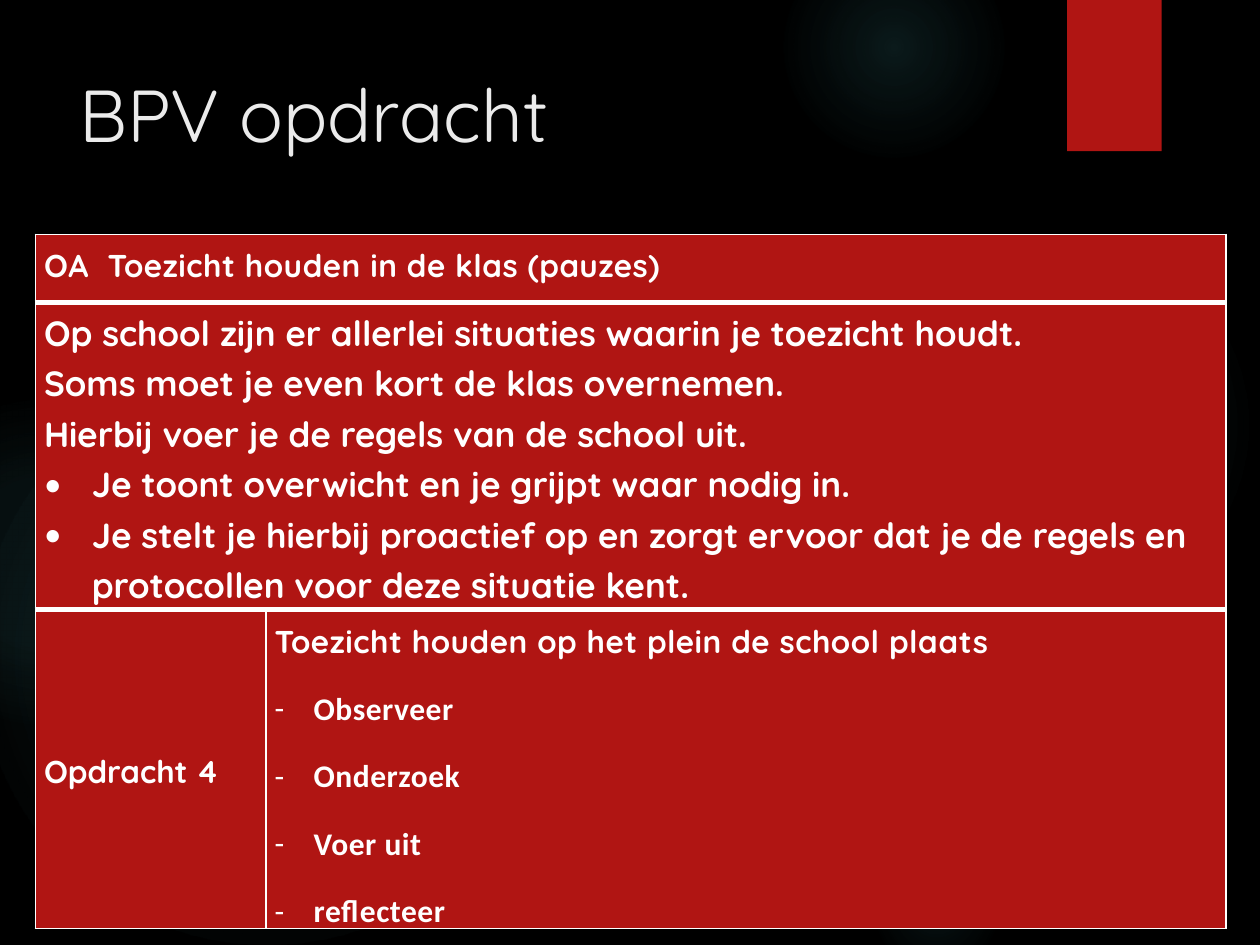
import lxml.etree
import pptx
import pptx.dml.color
import pptx.enum.shapes
import pptx.enum.text
import pptx.oxml.ns
import pptx.util

SLIDE_W, SLIDE_H = 10, 7.5
COLOURS = {"background": "000000", "red": "B01513", "glow": "50B9C1",
           "title": "EBEBEB", "white": "FFFFFF"}
HEADING = "Quicksand"
BODY = "Calibri"
MIDDLE = pptx.enum.text.MSO_ANCHOR.MIDDLE
TOP = pptx.enum.text.MSO_ANCHOR.TOP

# left, top, diameter, then (position %, opacity %) of each stop
GLOWS = [
    (6.89, 1.83, 3.08, [(0, 7), (36, 6), (69, 0)]),
    (6.22, -0.5, 1.75, [(0, 14), (36, 7), (73, 0)]),
    (6.89, 6.67, 1.08, [(0, 9), (36, 5), (66, 0)]),
    (-0.17, 2.92, 4.58, [(0, 11), (36, 10), (75, 0)]),
    (-0.92, 3.17, 2.58, [(0, 8), (36, 8), (72, 0)]),
]

INTRO = {"size": 20, "font": HEADING, "line_spacing": 1.15}
INTRO_BULLET = {**INTRO, "bullet": "•", "indent": 0.38}
LABEL = {"size": 18, "font": HEADING, "line_spacing": 1.15}
SUBJECT = {"size": 18, "font": HEADING, "line_spacing": 1.3, "tracking": 30}
TASK = {**SUBJECT, "space_after": 10}
STEP = {**TASK, "font": BODY, "bullet": "-", "indent": 0.31}

SUBJECT_TEXT = [("OA  Toezicht houden in de klas (pauzes)", SUBJECT)]
INTRO_TEXT = [
    ("Op school zijn er allerlei situaties waarin je toezicht houdt.", INTRO),
    ("Soms moet je even kort de klas overnemen.", INTRO),
    ("Hierbij voer je de regels van de school uit.", INTRO),
    ("Je toont overwicht en je grijpt waar nodig in.", INTRO_BULLET),
    ("Je stelt je hierbij proactief op en zorgt ervoor dat je de regels en "
     "protocollen voor deze situatie kent.", INTRO_BULLET),
]
LABEL_TEXT = [("Opdracht 4", LABEL)]
TASK_TEXT = [("Toezicht houden op het plein de school plaats", TASK)] + [
    (step, STEP) for step in ("Observeer", "Onderzoek", "Voer uit", "reflecteer")]


def rgb(name):
    return pptx.dml.color.RGBColor.from_string(COLOURS[name])


def inches(box):
    return [pptx.util.Inches(length) for length in box]


def add_node(parent, tag, **attributes):
    node = lxml.etree.SubElement(parent, pptx.oxml.ns.qn(tag))
    for key, value in attributes.items():
        node.set(key, str(value))
    return node


def add_plain_shape(slide, kind, box):
    shape = slide.shapes.add_shape(kind, *inches(box))
    shape.shadow.inherit = False
    shape.line.fill.background()
    return shape


def add_glow(slide, box, stops):
    """Ellipse that fades out from its centre."""
    glow = add_plain_shape(slide, pptx.enum.shapes.MSO_SHAPE.OVAL, box)
    glow.fill.gradient()
    gradient = glow.element.spPr.find(pptx.oxml.ns.qn("a:gradFill"))
    for child in list(gradient):
        gradient.remove(child)
    stop_list = add_node(gradient, "a:gsLst")
    for position, opacity in stops:
        stop = add_node(stop_list, "a:gs", pos=position * 1000)
        colour = add_node(stop, "a:srgbClr", val=COLOURS["glow"])
        add_node(colour, "a:alpha", val=opacity * 1000)
    circle = add_node(gradient, "a:path", path="circle")
    add_node(circle, "a:fillToRect", l=50000, t=50000, r=50000, b=50000)


def add_backdrop(slide):
    slide.background.fill.solid()
    slide.background.fill.fore_color.rgb = rgb("background")
    for left, top, diameter, stops in GLOWS:
        add_glow(slide, (left, top, diameter, diameter), stops)


def add_ribbon(slide, box):
    ribbon = add_plain_shape(slide, pptx.enum.shapes.MSO_SHAPE.RECTANGLE, box)
    ribbon.fill.solid()
    ribbon.fill.fore_color.rgb = rgb("red")


def add_title(slide, box):
    frame = slide.shapes.add_textbox(*inches(box)).text_frame
    frame.word_wrap = True
    frame.vertical_anchor = TOP
    run = frame.paragraphs[0].add_run()
    run.text = "BPV opdracht"
    run.font.color.rgb = rgb("title")
    for key, value in {"name": HEADING, "size": pptx.util.Pt(42)}.items():
        setattr(run.font, key, value)


def write_paragraph(paragraph, text, style):
    paragraph.line_spacing = style["line_spacing"]
    paragraph.space_after = pptx.util.Pt(style.get("space_after", 0))
    if "bullet" in style:
        properties = paragraph._p.get_or_add_pPr()
        indent = pptx.util.Inches(style["indent"])
        properties.set("marL", str(indent))
        properties.set("indent", str(-indent))
        add_node(properties, "a:buFont", typeface=BODY)
        add_node(properties, "a:buChar", char=style["bullet"])
    run = paragraph.add_run()
    run.text = text
    run.font.color.rgb = rgb("white")
    font = {"name": style["font"], "size": pptx.util.Pt(style["size"]), "bold": True}
    for key, value in font.items():
        setattr(run.font, key, value)
    run._r.get_or_add_rPr().set("spc", str(style.get("tracking", 0)))


def dress_cell(cell, top_width, bottom_width):
    """Set margins, white borders (in points) and the red fill."""
    margins = {"margin_left": 0.07, "margin_right": 0.07,
               "margin_top": 0, "margin_bottom": 0}
    for key, value in margins.items():
        setattr(cell, key, pptx.util.Inches(value))
    properties = cell._tc.get_or_add_tcPr()
    widths = {"a:lnL": 1, "a:lnR": 1, "a:lnT": top_width, "a:lnB": bottom_width}
    for tag, width in widths.items():
        border = add_node(properties, tag, w=pptx.util.Pt(width))
        add_node(add_node(border, "a:solidFill"), "a:srgbClr", val=COLOURS["white"])
    cell.fill.solid()
    cell.fill.fore_color.rgb = rgb("red")


def write_cell(cell, paragraphs, anchor):
    cell.vertical_anchor = anchor
    frame = cell.text_frame
    for index, (text, style) in enumerate(paragraphs):
        paragraph = frame.add_paragraph() if index else frame.paragraphs[0]
        write_paragraph(paragraph, text, style)


def add_assignment_table(slide, box):
    left, top, width, height = box
    label_width = 1.83
    subject_height, intro_height = 0.54, 2.44
    row_heights = [subject_height, intro_height,
                   height - subject_height - intro_height]
    edges = [1, 3, 3, 1]
    table = slide.shapes.add_table(3, 2, *inches(box)).table
    for column, column_width in zip(table.columns, (label_width, width - label_width)):
        column.width = pptx.util.Inches(column_width)
    for index, row in enumerate(table.rows):
        row.height = pptx.util.Inches(row_heights[index])
        for cell in row.cells:
            dress_cell(cell, edges[index], edges[index + 1])
    for index in (0, 1):
        table.cell(index, 0).merge(table.cell(index, 1))
    write_cell(table.cell(0, 0), SUBJECT_TEXT, TOP)
    write_cell(table.cell(1, 0), INTRO_TEXT, MIDDLE)
    write_cell(table.cell(2, 0), LABEL_TEXT, MIDDLE)
    write_cell(table.cell(2, 1), TASK_TEXT, MIDDLE)


def main():
    deck = pptx.Presentation()
    deck.slide_width, deck.slide_height = inches((SLIDE_W, SLIDE_H))
    slide = deck.slides.add_slide(deck.slide_layouts[6])
    add_backdrop(slide)
    add_ribbon(slide, (8.47, 0, 0.75, 0.16 * SLIDE_H))
    add_title(slide, (0.53, 0.5, 7.72, 1.53))
    add_assignment_table(slide, (0.28, 1.86, 9.45, 5.51))
    deck.save("out.pptx")


if __name__ == "__main__":
    main()
